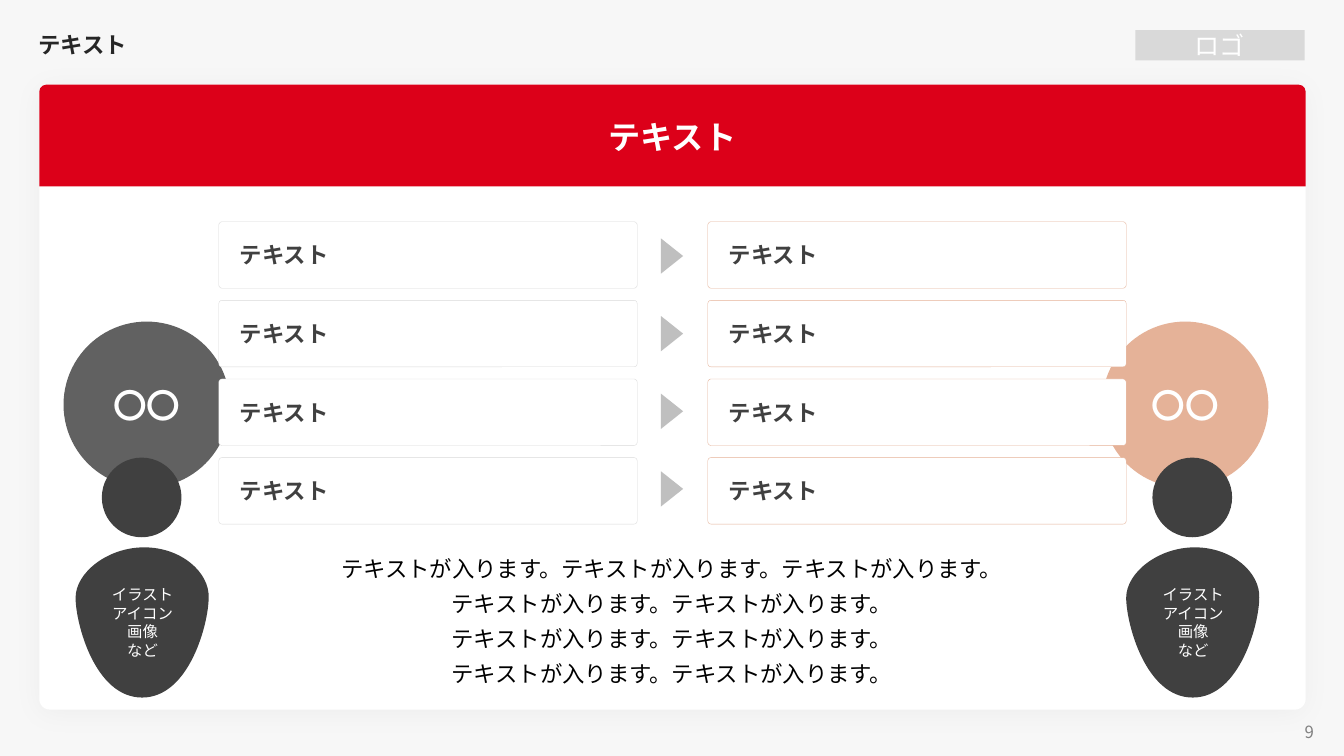
"""Build a before-and-after comparison slide with four rows and two figures."""
from dataclasses import dataclass

from lxml.etree import SubElement
from pptx import Presentation
from pptx.dml.color import RGBColor
from pptx.enum.shapes import MSO_SHAPE
from pptx.enum.text import MSO_ANCHOR, PP_ALIGN
from pptx.oxml.ns import qn
from pptx.util import Inches, Pt

WHITE = RGBColor(0xFF, 0xFF, 0xFF)
BLACK = RGBColor(0x00, 0x00, 0x00)
BACKDROP = RGBColor(0xF7, 0xF7, 0xF7)
RED = RGBColor(0xDC, 0x00, 0x19)
PEACH = RGBColor(0xE5, 0xB2, 0x98)
TITLE_INK = RGBColor(0x26, 0x26, 0x26)
CHARCOAL = RGBColor(0x40, 0x40, 0x40)
GRAY = RGBColor(0x61, 0x61, 0x61)
PAGE_GRAY = RGBColor(0x80, 0x80, 0x80)
ARROW_GRAY = RGBColor(0xBF, 0xBF, 0xBF)
PALE_GRAY = RGBColor(0xD9, 0xD9, 0xD9)

FONT = "Noto Sans CJK JP"
LABEL = "テキスト"
SENTENCE = "テキストが入ります。"
CLOSING = "\n".join(SENTENCE * count for count in (3, 2, 2, 2))
FIGURE_NOTE = "イラスト\nアイコン\n画像\nなど"

ROWS = 4
ROW_TOP, ROW_STEP = 2.2, 0.78
ARROW_TOP, ARROW_STEP = 2.43, 0.77

TORSO_START = (1.43, 5.43)
TORSO_CURVES = (
    (1.8, 5.43), (2.08, 5.68), (2.07, 5.93),
    (2.07, 6.18), (1.88, 6.92), (1.41, 6.92),
    (0.94, 6.92), (0.75, 6.18), (0.75, 5.93),
    (0.75, 5.68), (1.07, 5.43), TORSO_START,
)


@dataclass(frozen=True)
class Side:
    """One half of the comparison: its disc, its row boxes and its figure."""
    disc_left: float
    disc_color: RGBColor
    box_left: float
    box_line: RGBColor
    figure_shift: float


SIDES = (
    Side(0.63, GRAY, 2.17, PALE_GRAY, 0),
    Side(10.93, PEACH, 7.02, PEACH, 10.42),
)


def write_text(frame, text: str, *, size: float, color: RGBColor, bold: bool = False,
               align=PP_ALIGN.CENTER, anchor=MSO_ANCHOR.MIDDLE, font: str = FONT,
               spacing=None, left_inset: float = 0.1) -> None:
    """Fill a text frame with one paragraph per line of text."""
    frame.word_wrap = True
    frame.vertical_anchor = anchor
    frame.margin_left = Inches(left_inset)
    frame.margin_right = Inches(0.1)
    frame.margin_top = frame.margin_bottom = Inches(0.05)
    frame.text = text
    for paragraph in frame.paragraphs:
        paragraph.alignment = align
        paragraph.line_spacing = spacing
        for run in paragraph.runs:
            run.font.size = Pt(size)
            run.font.bold = bold
            run.font.color.rgb = color
            run.font.name = font
            SubElement(run.font._element, qn("a:ea"), typeface=font)


def paint(shape, fill: RGBColor, line: RGBColor | None = None) -> None:
    """Give a shape a flat fill and an optional hairline."""
    shape.shadow.inherit = False
    shape.fill.solid()
    shape.fill.fore_color.rgb = fill
    if line is None:
        shape.line.fill.background()
    else:
        shape.line.color.rgb = line
        shape.line.width = Pt(0.25)


def add_block(slide, kind, left: float, top: float, width: float, height: float,
              fill: RGBColor, line: RGBColor | None = None, corners: tuple = ()):
    """Add a painted preset shape."""
    shape = slide.shapes.add_shape(
        kind, Inches(left), Inches(top), Inches(width), Inches(height))
    for index, corner in enumerate(corners):
        shape.adjustments[index] = corner
    paint(shape, fill, line)
    return shape


def add_soft_shadow(shape) -> None:
    """Put a faint shadow below a shape."""
    effects = shape._element.spPr.find(qn("a:effectLst"))
    shadow = SubElement(effects, qn("a:outerShdw"), blurRad=str(Pt(20)),
                        dist=str(Pt(3)), dir="5400000", algn="t", rotWithShape="0")
    tint = SubElement(shadow, qn("a:srgbClr"), val=str(BLACK))
    SubElement(tint, qn("a:alpha"), val="3000")


def round_outline(shape) -> None:
    """Turn each three line segments of a freeform into one Bézier curve."""
    segments = list(shape._element.spPr.iter(qn("a:lnTo")))
    for first in range(0, len(segments), 3):
        curve = segments[first].makeelement(qn("a:cubicBezTo"))
        segments[first].addprevious(curve)
        for segment in segments[first:first + 3]:
            curve.append(segment[0])
            segment.getparent().remove(segment)


def add_figure(slide, shift: float) -> None:
    """Draw a head and a labelled torso."""
    add_block(slide, MSO_SHAPE.OVAL, 1.01 + shift, 4.54, 0.79, 0.79, CHARCOAL)
    start, *controls = [(Inches(x + shift), Inches(y))
                        for x, y in (TORSO_START, *TORSO_CURVES)]
    outline = slide.shapes.build_freeform(*start)
    outline.add_line_segments(controls, close=True)
    torso = outline.convert_to_shape()
    round_outline(torso)
    paint(torso, CHARCOAL)
    write_text(torso.text_frame, FIGURE_NOTE, size=11, color=WHITE, font="Cabin")


def add_frame(slide) -> None:
    """Add the backdrop, title, logo slot, page number, card and red header."""
    slide.background.fill.solid()
    slide.background.fill.fore_color.rgb = BACKDROP

    title = slide.shapes.title
    title.left, title.top = Inches(0.28), Inches(0.25)
    title.width, title.height = Inches(10), Inches(0.41)
    write_text(title.text_frame, LABEL, size=16, color=TITLE_INK, bold=True,
               align=PP_ALIGN.LEFT, spacing=0.9)

    card = add_block(slide, MSO_SHAPE.ROUNDED_RECTANGLE, 0.39, 0.84, 12.56, 6.2,
                     WHITE, corners=(0.017,))
    add_soft_shadow(card)
    page = slide.shapes.add_textbox(Inches(10.02), Inches(7.14), Inches(3.11), Inches(0.24))
    write_text(page.text_frame, "9", size=12, color=PAGE_GRAY, align=PP_ALIGN.RIGHT)
    logo_slot = add_block(slide, MSO_SHAPE.RECTANGLE, 11.26, 0.3, 1.68, 0.3, PALE_GRAY)
    write_text(logo_slot.text_frame, "ロゴ", size=18, color=WHITE)
    header = add_block(slide, MSO_SHAPE.ROUND_2_SAME_RECTANGLE, 0.39, 0.84, 12.56, 1.01,
                       RED, corners=(0.068, 0))
    write_text(header.text_frame, LABEL, size=23, color=WHITE, bold=True)


def add_comparison(slide) -> None:
    """Add the discs, the closing text, the rows with arrows and the figures."""
    for side in SIDES:
        disc = add_block(slide, MSO_SHAPE.OVAL, side.disc_left, 3.19, 1.65, 1.65,
                         side.disc_color)
        write_text(disc.text_frame, "〇〇", size=24, color=WHITE, bold=True)

    closing = slide.shapes.add_textbox(Inches(2.92), Inches(5.38), Inches(7.49), Inches(1.48))
    write_text(closing.text_frame, CLOSING, size=16, color=BLACK,
               anchor=MSO_ANCHOR.TOP, spacing=Pt(25))

    for row in range(ROWS):
        for side in SIDES:
            box = add_block(slide, MSO_SHAPE.ROUNDED_RECTANGLE, side.box_left,
                            ROW_TOP + row * ROW_STEP, 4.15, 0.66, WHITE,
                            side.box_line, corners=(0.048,))
            write_text(box.text_frame, LABEL, size=16, color=CHARCOAL, bold=True,
                       align=PP_ALIGN.LEFT, left_inset=0.2)
        arrow = add_block(slide, MSO_SHAPE.ISOSCELES_TRIANGLE, 6.49,
                          ARROW_TOP + row * ARROW_STEP, 0.35, 0.22, ARROW_GRAY)
        arrow.rotation = 90

    for side in SIDES:
        add_figure(slide, side.figure_shift)


def main() -> None:
    """Build and save the slide."""
    deck = Presentation()
    deck.slide_width, deck.slide_height = Inches(13.33), Inches(7.5)
    slide = deck.slides.add_slide(deck.slide_layouts.get_by_name("Title Only"))
    add_frame(slide)
    add_comparison(slide)
    deck.save("out.pptx")


if __name__ == "__main__":
    main()
